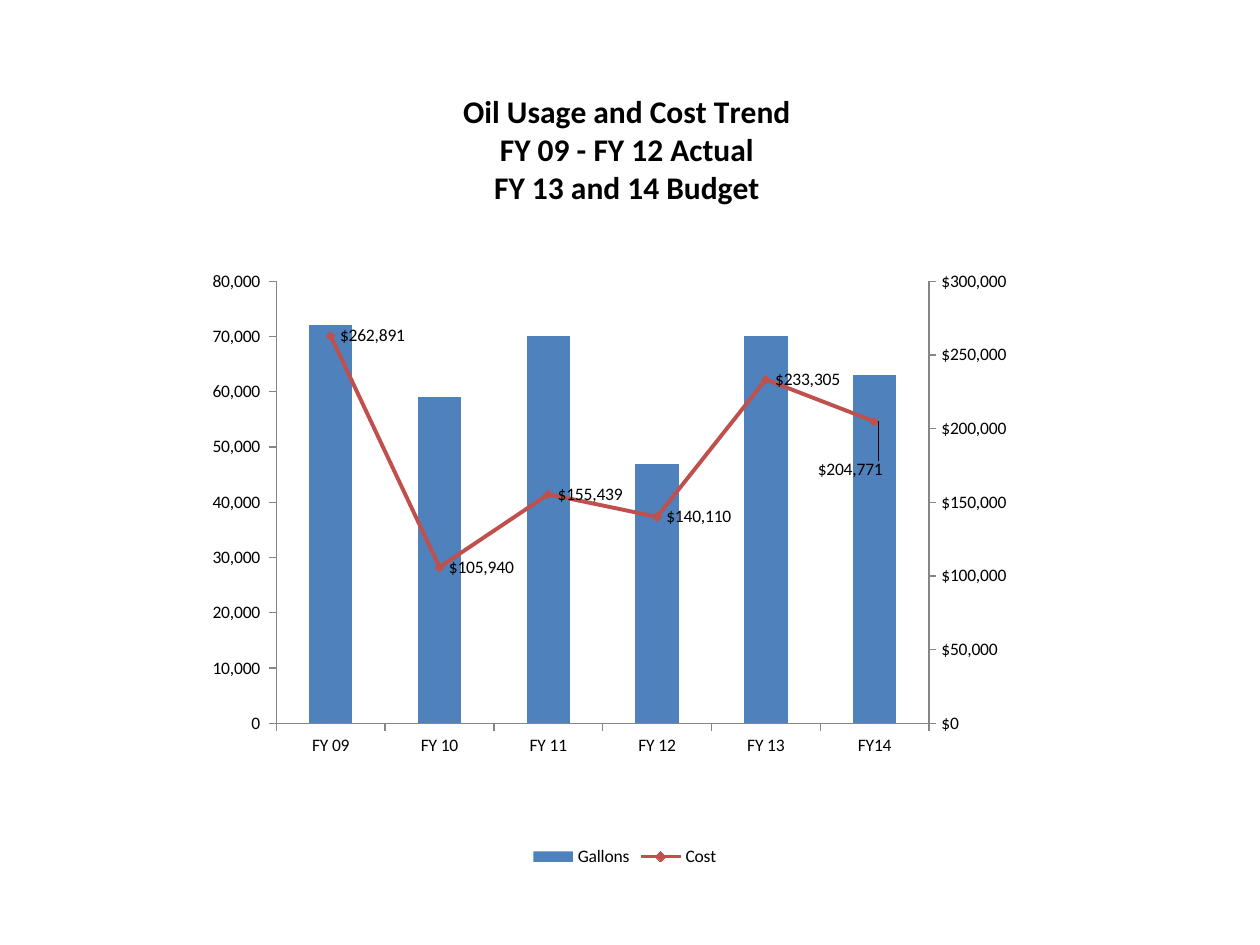
import copy

import pptx
import pptx.chart.axis
import pptx.chart.data
import pptx.dml.color
import pptx.enum.chart
import pptx.oxml
import pptx.oxml.ns
import pptx.util

Pt = pptx.util.Pt
qn = pptx.oxml.ns.qn

COLORS = {"gallons": "4F81BD", "cost": "C0504D", "text": "000000", "axis": "868686"}
TITLE_LINES = ["Oil Usage and Cost Trend", "FY 09 - FY 12 Actual", "FY 13 and 14 Budget"]
YEARS = ["FY 09", "FY 10", "FY 11", "FY 12", "FY 13", "FY14"]
GALLONS = [72000, 59000, 70000, 47000, 70000, 63000]
COST = [262891, 105940, 155439, 140110, 233305, 204771]
GALLONS_FORMAT = r"#,##0_);\(#,##0\)"
COST_FORMAT = '"$"#,##0'


def rgb(name):
    return pptx.dml.color.RGBColor.from_string(COLORS[name])


def chart_xml(tag, content="", **attributes):
    """Make one chart element, with optional inner XML."""
    values = "".join(f' {key}="{value}"' for key, value in attributes.items())
    namespace = pptx.oxml.ns.nsdecls("c")
    return pptx.oxml.parse_xml(f"<c:{tag} {namespace}{values}>{content}</c:{tag}>")


def manual_layout(**settings):
    content = "".join(f'<c:{key} val="{value}"/>' for key, value in settings.items())
    return chart_xml("layout", f"<c:manualLayout>{content}</c:manualLayout>")


def remove_children(parent, tag):
    for child in parent.findall(qn(tag)):
        parent.remove(child)


def replace_layout(parent, layout, index):
    remove_children(parent, "c:layout")
    parent.insert(index, layout)


def format_axis(axis):
    axis.has_major_gridlines = False
    axis.major_tick_mark = pptx.enum.chart.XL_TICK_MARK.OUTSIDE
    axis.minor_tick_mark = pptx.enum.chart.XL_TICK_MARK.NONE
    axis.format.line.color.rgb = rgb("axis")
    axis.format.line.width = Pt(0.75)


def format_value_axis(axis, maximum, step, number_format):
    format_axis(axis)
    axis.minimum_scale = 0
    axis.maximum_scale = maximum
    axis.major_unit = step
    axis.tick_labels.number_format = number_format
    axis.tick_labels.number_format_is_linked = False


def add_title(chart):
    title = chart.chart_title
    frame = title.text_frame
    for number, line in enumerate(TITLE_LINES):
        paragraph = frame.paragraphs[0] if number == 0 else frame.add_paragraph()
        run = paragraph.add_run()
        run.text = line
        run.font.name = "Calibri"
        run.font.size = Pt(18)
        run.font.bold = True
        run.font.color.rgb = rgb("text")
    element = title._element
    replace_layout(element, manual_layout(xMode="edge", yMode="edge", x=0.35, y=0.03), 1)
    remove_children(element, "c:overlay")
    element.insert(2, chart_xml("overlay", val=1))


def move_cost_to_right_axis(chart):
    """Turn the second column series into a line on its own pair of axes."""
    plot_area = chart._chartSpace.find(".//" + qn("c:plotArea"))
    columns = plot_area.find(qn("c:barChart"))
    series = columns.findall(qn("c:ser"))[1]
    remove_children(series, "c:invertIfNegative")

    line = chart_xml("lineChart", '<c:grouping val="standard"/><c:varyColors val="0"/>')
    line.append(series)
    line.append(chart_xml("marker", val=1))
    for axis_id in (1001, 1002):
        line.append(chart_xml("axId", val=axis_id))
    columns.addnext(line)

    value_axis = copy.deepcopy(plot_area.find(qn("c:valAx")))
    category_axis = copy.deepcopy(plot_area.find(qn("c:catAx")))
    for axis, own_id, other_id in ((value_axis, 1002, 1001), (category_axis, 1001, 1002)):
        axis.find(qn("c:axId")).set("val", str(own_id))
        axis.find(qn("c:crossAx")).set("val", str(other_id))
    value_axis.find(qn("c:axPos")).set("val", "r")
    remove_children(value_axis, "c:crosses")
    value_axis.find(qn("c:crossAx")).addnext(chart_xml("crosses", val="max"))
    remove_children(category_axis, "c:delete")
    category_axis.find(qn("c:scaling")).addnext(chart_xml("delete", val=1))
    last_axis = plot_area.findall(qn("c:valAx"))[-1]
    last_axis.addnext(value_axis)
    value_axis.addnext(category_axis)

    replace_layout(plot_area, manual_layout(
        layoutTarget="inner", xMode="edge", yMode="edge",
        x=0.184, y=0.27, w=0.592, h=0.547), 0)
    return pptx.chart.axis.ValueAxis(value_axis)


def format_cost_line(series):
    series.smooth = False
    series.format.line.color.rgb = rgb("cost")
    series.format.line.width = Pt(2.25)
    series.marker.style = pptx.enum.chart.XL_MARKER_STYLE.DIAMOND
    series.marker.size = 5
    series.marker.format.fill.solid()
    series.marker.format.fill.fore_color.rgb = rgb("cost")
    series.marker.format.line.color.rgb = rgb("cost")

    labels = series.data_labels
    labels.show_value = True
    labels.number_format = COST_FORMAT
    labels.number_format_is_linked = False
    labels.position = pptx.enum.chart.XL_LABEL_POSITION.RIGHT
    labels.font.size = Pt(10)
    labels.font.color.rgb = rgb("text")

    # The last label sits below and left of its point
    series.points[len(YEARS) - 1].data_label.position = labels.position
    label = labels._element.find(qn("c:dLbl"))
    label.insert(1, manual_layout(x=-0.06, y=0.06))
    label.insert(2, chart_xml("numFmt", formatCode=COST_FORMAT.replace('"', "&quot;"),
                              sourceLinked=0))


def add_usage_chart(slide):
    data = pptx.chart.data.CategoryChartData()
    data.categories = YEARS
    data.add_series("Gallons", GALLONS, number_format="#,##0")
    data.add_series("Cost", COST, number_format=COST_FORMAT)
    chart = slide.shapes.add_chart(
        pptx.enum.chart.XL_CHART_TYPE.COLUMN_CLUSTERED,
        Pt(42), Pt(36), Pt(630), Pt(462), data).chart
    chart.font.name = "Calibri"
    chart.font.size = Pt(10)
    chart.font.color.rgb = rgb("text")
    add_title(chart)

    # Columns and axes
    columns = chart.plots[0]
    columns.gap_width = 150
    columns.vary_by_categories = False
    columns.series[0].format.fill.solid()
    columns.series[0].format.fill.fore_color.rgb = rgb("gallons")
    format_axis(chart.category_axis)
    format_value_axis(chart.value_axis, 80000, 10000, GALLONS_FORMAT)
    cost_axis = move_cost_to_right_axis(chart)
    format_value_axis(cost_axis, 300000, 50000, r"\$#,##0")
    format_cost_line(chart.plots[1].series[0])

    # Legend
    chart.has_legend = True
    chart.legend.position = pptx.enum.chart.XL_LEGEND_POSITION.BOTTOM
    chart.legend.include_in_layout = False


def main():
    presentation = pptx.Presentation()
    presentation.slide_width = Pt(720)
    presentation.slide_height = Pt(540)
    slide = presentation.slides.add_slide(presentation.slide_layouts[6])
    add_usage_chart(slide)
    presentation.save("out.pptx")


if __name__ == "__main__":
    main()
